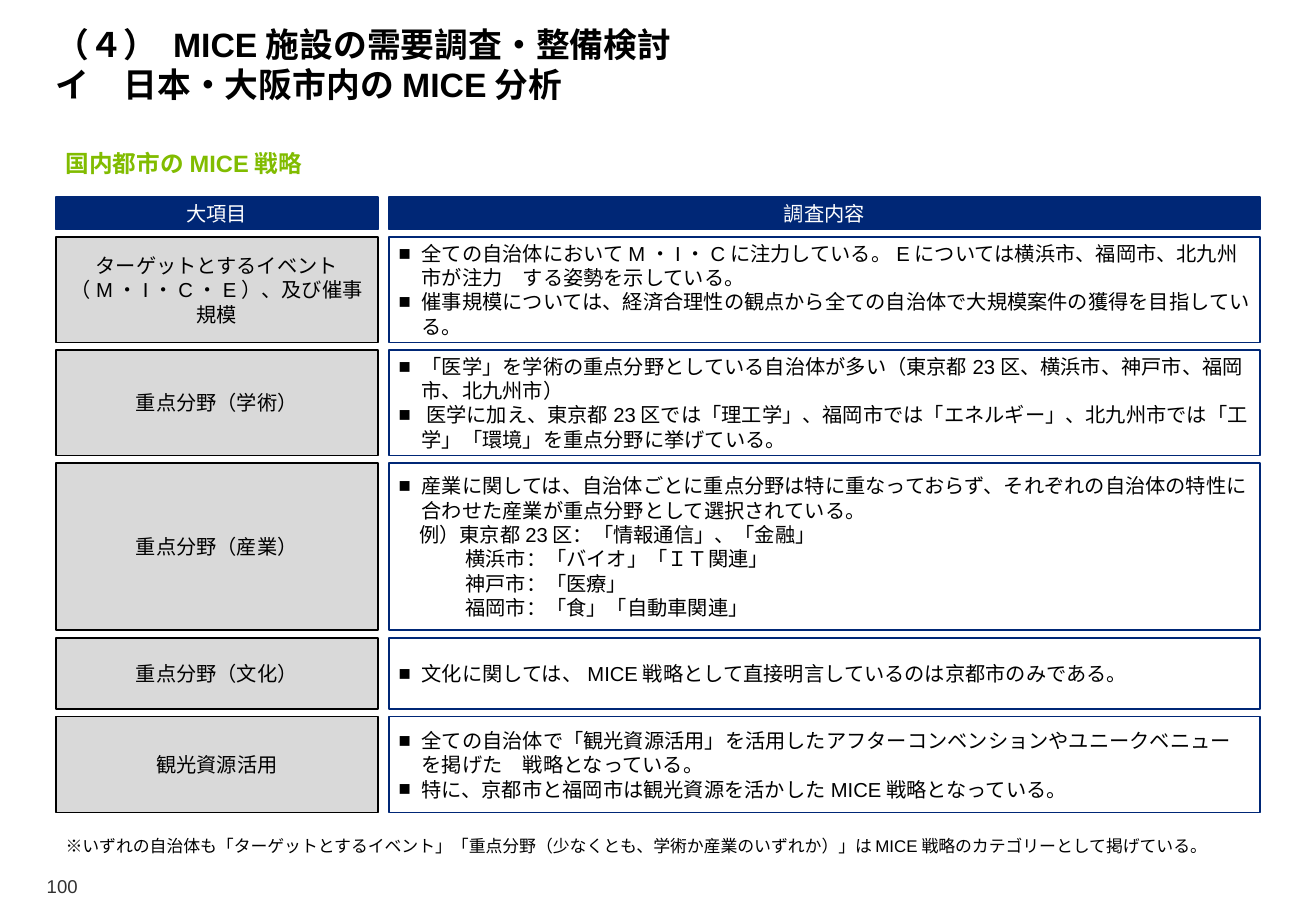
"""Builds the slide on the MICE strategies of Japanese cities."""
from lxml.etree import SubElement
from pptx import Presentation
from pptx.dml.color import RGBColor
from pptx.enum.shapes import MSO_SHAPE
from pptx.enum.text import MSO_ANCHOR, PP_ALIGN
from pptx.oxml.ns import qn
from pptx.util import Inches, Pt

COLORS = {"navy": "002776", "green": "81BC00", "grey": "D9D9D9",
          "black": "000000", "white": "FFFFFF", "number": "313131"}
BULLET_INDENT, EXAMPLE_INDENT, CITY_INDENT = 0.19, 0.17, 0.55
MARGIN, WIDTH, GAP = 0.46, 9.91, 0.06
TOPIC_WIDTH, FINDING_LEFT, FINDING_WIDTH = 2.65, 3.2, 7.17
TABLE_TOP, HEADER_HEIGHT = 1.62, 0.27

deck = Presentation()
deck.slide_width, deck.slide_height = Inches(10.83), Inches(7.5)
slide = deck.slides.add_slide(deck.slide_layouts[6])


def write(holder, lines, size, color, inset=0.08, anchor=MSO_ANCHOR.MIDDLE,
          align=PP_ALIGN.LEFT, bold=False):
    frame = holder.text_frame
    frame.word_wrap = True
    frame.vertical_anchor = anchor
    frame.margin_left = frame.margin_right = Inches(inset)
    frame.margin_top = frame.margin_bottom = Inches(inset)
    frame.text = "\n".join(lines)
    for paragraph in frame.paragraphs:
        paragraph.alignment = align
        for run in paragraph.runs:
            run.font.name = "Arial"
            run.font.size = Pt(size)
            run.font.bold = bold
            run.font.color.rgb = RGBColor.from_string(COLORS[color])
    return frame


def add_cell(left, top, width, height, fill, line, line_width=1):
    cell = slide.shapes.add_shape(MSO_SHAPE.RECTANGLE, Inches(left), Inches(top),
                                  Inches(width), Inches(height))
    cell.shadow.inherit = False
    cell.fill.solid()
    cell.fill.fore_color.rgb = RGBColor.from_string(COLORS[fill])
    cell.line.color.rgb = RGBColor.from_string(COLORS[line])
    cell.line.width = Pt(line_width)
    return cell


title = slide.shapes.add_textbox(Inches(MARGIN), Inches(0.15), Inches(WIDTH), Inches(0.71))
write(title, ["（４） MICE施設の需要調査・整備検討\vイ　日本・大阪市内のMICE分析"], 20, "black",
      inset=0, anchor=MSO_ANCHOR.BOTTOM, bold=True)

heading = slide.shapes.add_textbox(Inches(MARGIN), Inches(1.11), Inches(4.72), Inches(0.47))
write(heading, ["国内都市のMICE戦略"], 14, "green", bold=True)

for left, width, label in [(MARGIN, TOPIC_WIDTH, "大項目"),
                           (FINDING_LEFT, FINDING_WIDTH, "調査内容")]:
    header = add_cell(left, TABLE_TOP, width, HEADER_HEIGHT, "navy", "navy")
    write(header, [label], 12, "white", align=PP_ALIGN.CENTER)

rows = [
    (0.87, ["ターゲットとするイベント", "（M・I・C・E）、及び催事規模"], [
        "全ての自治体においてM・I・Cに注力している。Eについては横浜市、福岡市、北九州市が注力　する姿勢を示している。",
        "催事規模については、経済合理性の観点から全ての自治体で大規模案件の獲得を目指している。"], []),
    (0.87, ["重点分野（学術）"], [
        "「医学」を学術の重点分野としている自治体が多い（東京都23区、横浜市、神戸市、福岡市、北九州市）",
        " 医学に加え、東京都23区では「理工学」、福岡市では「エネルギー」、北九州市では「工学」「環境」を重点分野に挙げている。"], []),
    (1.38, ["重点分野（産業）"], [
        "産業に関しては、自治体ごとに重点分野は特に重なっておらず、それぞれの自治体の特性に合わせた産業が重点分野として選択されている。"], [
        "例）東京都23区：「情報通信」、「金融」",
        "横浜市：「バイオ」「ＩＴ関連」",
        "神戸市：「医療」",
        "福岡市：「食」「自動車関連」"]),
    (0.59, ["重点分野（文化）"], [
        "文化に関しては、MICE戦略として直接明言しているのは京都市のみである。"], []),
    (0.79, ["観光資源活用"], [
        "全ての自治体で「観光資源活用」を活用したアフターコンベンションやユニークベニューを掲げた　戦略となっている。",
        "特に、京都市と福岡市は観光資源を活かしたMICE戦略となっている。"], []),
]

top = TABLE_TOP + HEADER_HEIGHT + GAP
for height, topic, findings, examples in rows:
    topic_cell = add_cell(MARGIN, top, TOPIC_WIDTH, height, "grey", "black")
    write(topic_cell, topic, 12, "black", align=PP_ALIGN.CENTER)
    finding_cell = add_cell(FINDING_LEFT, top, FINDING_WIDTH, height, "white", "navy")
    frame = write(finding_cell, findings + examples, 12, "black")
    for index, paragraph in enumerate(frame.paragraphs):
        layout = paragraph._p.get_or_add_pPr()
        if index < len(findings):
            layout.set("marL", str(Inches(BULLET_INDENT)))
            layout.set("indent", str(-Inches(BULLET_INDENT)))
            SubElement(layout, qn("a:buFont"), typeface="Arial")
            SubElement(layout, qn("a:buChar"), char="■")
        else:
            indent = EXAMPLE_INDENT if index == len(findings) else CITY_INDENT
            layout.set("marL", str(Inches(indent)))
    top += height + GAP

footnote = add_cell(MARGIN, 6.73, WIDTH, 0.47, "white", "white", 2)
write(footnote, ["※いずれの自治体も「ターゲットとするイベント」「重点分野（少なくとも、学術か産業のいずれか）」はMICE戦略のカテゴリーとして掲げている。"],
      10, "black")

page_number = slide.shapes.add_textbox(Inches(0.34), Inches(7.2), Inches(0.3), Inches(0.19))
write(page_number, ["100"], 11, "number", inset=0, anchor=MSO_ANCHOR.BOTTOM,
      align=PP_ALIGN.RIGHT)

deck.save("out.pptx")
